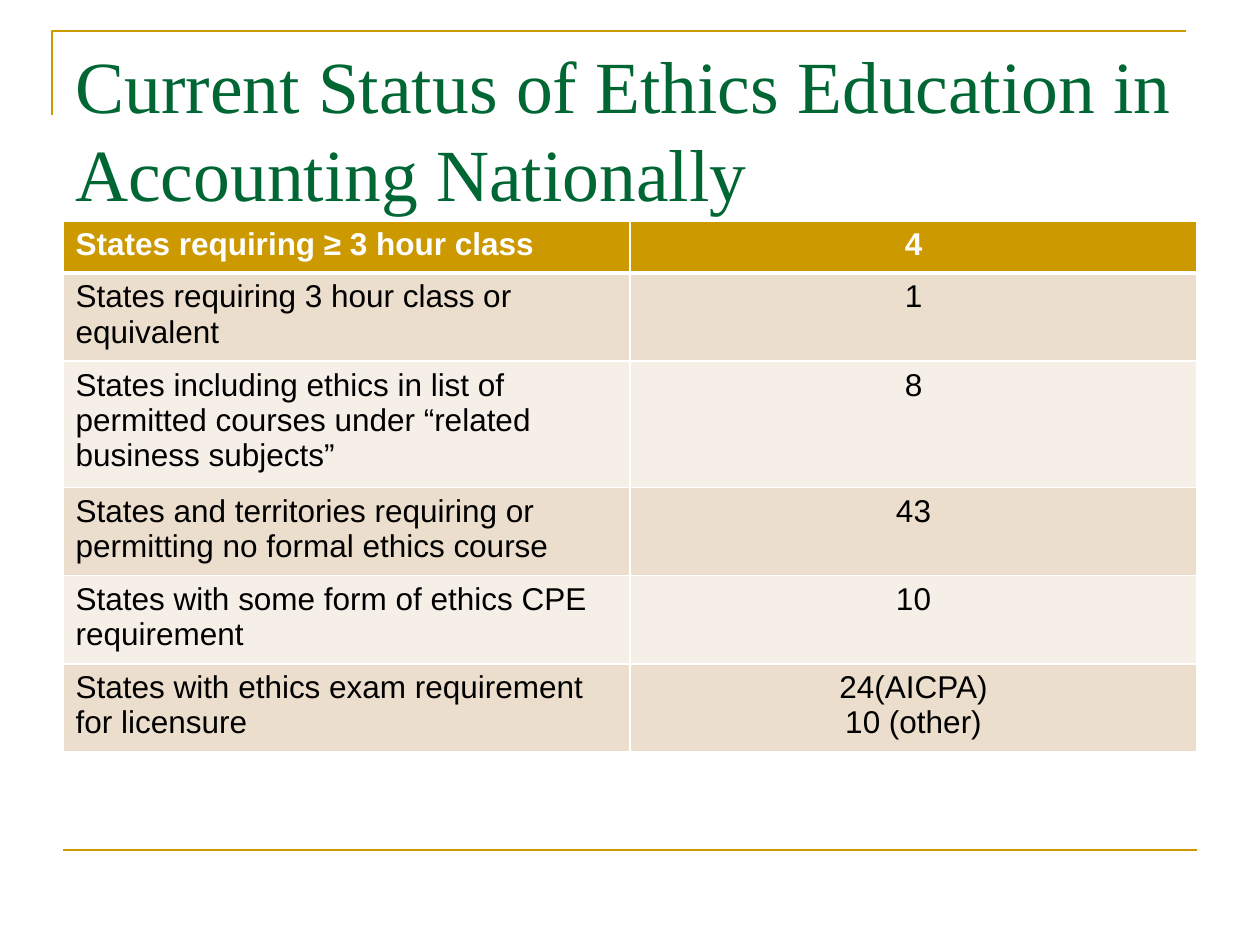
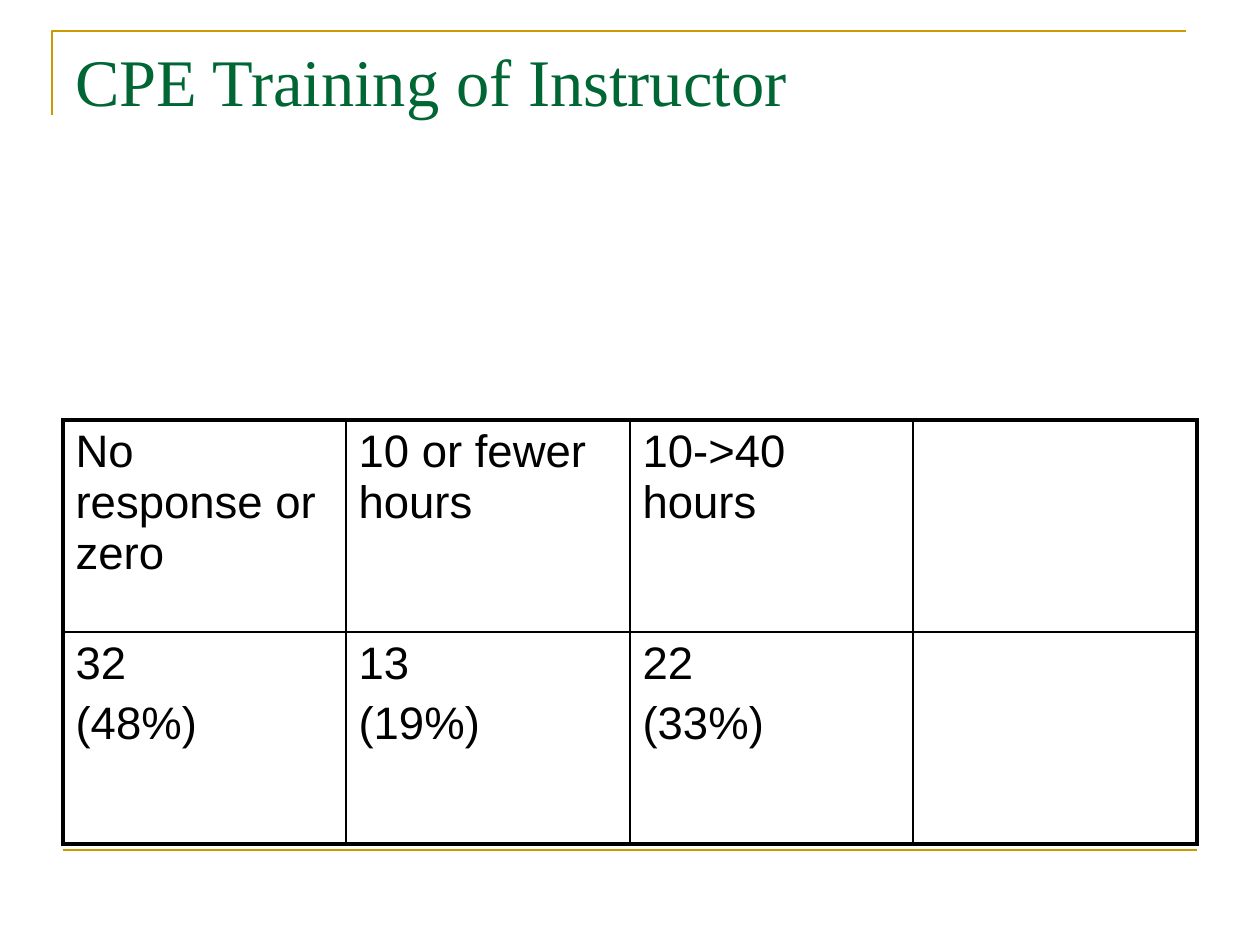
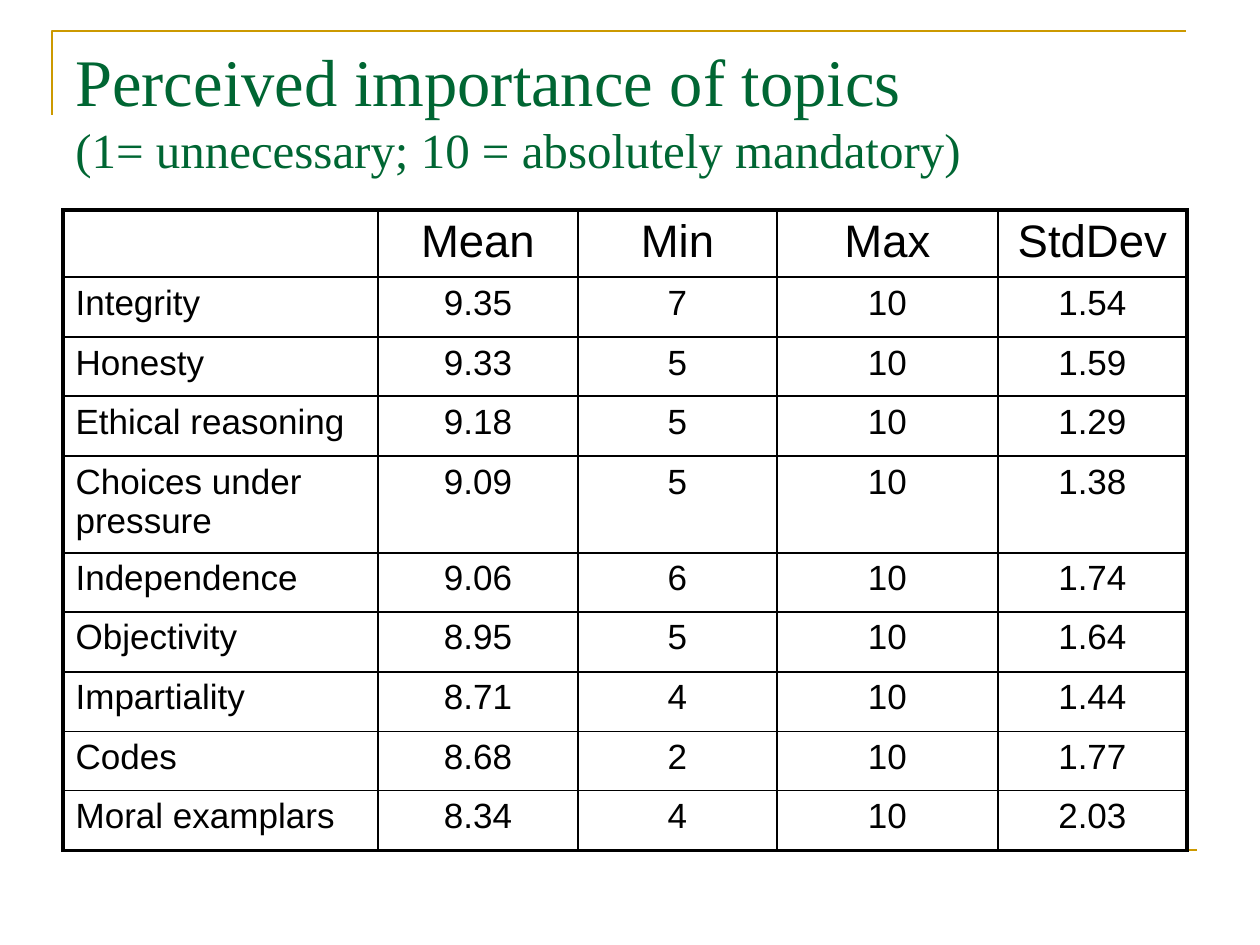
"""Build three slides on ethics education in accounting."""
import pptx
import pptx.dml.color
import pptx.enum.shapes
import pptx.enum.text
import pptx.oxml.ns
import pptx.util
from lxml import etree

RGBColor = pptx.dml.color.RGBColor
ALIGN = pptx.enum.text.PP_ALIGN

GOLD = RGBColor(0xCC, 0x99, 0x00)
GREEN = RGBColor(0x00, 0x66, 0x33)
BLACK = RGBColor(0x00, 0x00, 0x00)
WHITE = RGBColor(0xFF, 0xFF, 0xFF)
TAN = RGBColor(0xEC, 0xDE, 0xCC)
CREAM = RGBColor(0xF6, 0xEF, 0xE7)

TITLE_FONT, BODY_FONT = "Times New Roman", "Arial"
EMU_PER_PX = 914400 / 126
SLIDE_WIDTH, SLIDE_HEIGHT = 1260, 945
LEFT, CONTENT_WIDTH = 63, 1134
TITLE_TOP, TITLE_HEIGHT, TITLE_INSET = 38, 157, 2
CORNER = [(52, 115), (52, 31), (1186, 31)]
FOOTER_Y = 850

SLIDES = [
    {
        "title": [("Current Status of Ethics Education in Accounting Nationally", 42)],
        "top": 221,
        "columns": [567, 567],
        "heights": [52] * 6,
        "sizes": (18, 18),
        "centred_from": 1,
        "banded": True,
        "rows": [
            ("States requiring ≥ 3 hour class", "4"),
            ("States requiring 3 hour class or equivalent", "1"),
            ("States including ethics in list of permitted courses under "
             "“related business subjects”", "8"),
            ("States and territories requiring or permitting no formal ethics course", "43"),
            ("States with some form of ethics CPE requirement", "10"),
            ("States with ethics exam requirement for licensure", "24(AICPA)\n10 (other)"),
        ],
    },
    {
        "title": [("CPE Training of Instructor", 38)],
        "top": 420,
        "columns": [283, 284, 283, 284],
        "heights": [212, 212],
        "sizes": (26, 26),
        "centred_from": 4,
        "banded": False,
        "rows": [
            ("No response or zero", "10 or fewer hours", "10->40 hours", ""),
            ("32\n(48%)", "13\n(19%)", "22\n(33%)", ""),
        ],
    },
    {
        "title": [("Perceived importance of topics", 38),
                  ("(1= unnecessary; 10 = absolutely mandatory)", 28)],
        "top": 210,
        "columns": [315, 200, 199, 221, 189],
        "heights": [62, 60, 59, 60, 89, 59, 60, 60, 59, 60],
        "sizes": (26, 20),
        "centred_from": 1,
        "banded": False,
        "rows": [
            ("", "Mean", "Min", "Max", "StdDev"),
            ("Integrity", "9.35", "7", "10", "1.54"),
            ("Honesty", "9.33", "5", "10", "1.59"),
            ("Ethical reasoning", "9.18", "5", "10", "1.29"),
            ("Choices under pressure", "9.09", "5", "10", "1.38"),
            ("Independence", "9.06", "6", "10", "1.74"),
            ("Objectivity", "8.95", "5", "10", "1.64"),
            ("Impartiality", "8.71", "4", "10", "1.44"),
            ("Codes", "8.68", "2", "10", "1.77"),
            ("Moral examplars", "8.34", "4", "10", "2.03"),
        ],
    },
]


def px(length):
    return pptx.util.Emu(round(length * EMU_PER_PX))


def write(paragraph, text, *, size, font=BODY_FONT, color=BLACK, bold=False,
          align=ALIGN.LEFT, before=0):
    paragraph.alignment = align
    if before:
        paragraph.space_before = pptx.util.Pt(before)
    run = paragraph.add_run()
    run.text = text
    run.font.size = pptx.util.Pt(size)
    run.font.name = font
    run.font.bold = bold
    run.font.color.rgb = color


def style_line(line):
    line.color.rgb = GOLD
    line.width = pptx.util.Pt(1.5)


def add_rules(slide):
    builder = slide.shapes.build_freeform(*CORNER[0], scale=EMU_PER_PX)
    builder.add_line_segments(CORNER[1:], close=False)
    corner = builder.convert_to_shape()
    corner.shadow.inherit = False
    corner.fill.background()
    style_line(corner.line)
    footer = slide.shapes.add_connector(
        pptx.enum.shapes.MSO_CONNECTOR.STRAIGHT,
        px(LEFT), px(FOOTER_Y), px(LEFT + CONTENT_WIDTH), px(FOOTER_Y))
    style_line(footer.line)
    etree.SubElement(footer._element.spPr, pptx.oxml.ns.qn("a:effectLst"))


def add_title(slide, lines):
    frame = slide.shapes.add_textbox(
        px(LEFT), px(TITLE_TOP), px(CONTENT_WIDTH), px(TITLE_HEIGHT)).text_frame
    frame.word_wrap = True
    frame.margin_top = px(TITLE_INSET)
    paragraph = frame.paragraphs[0]
    for index, (text, size) in enumerate(lines):
        if index:
            paragraph.add_line_break()
        write(paragraph, text, size=size, font=TITLE_FONT, color=GREEN)


def set_borders(cell, color, widths):
    properties = cell._tc.get_or_add_tcPr()
    for side, width in zip("LRTB", widths):
        border = etree.SubElement(properties, pptx.oxml.ns.qn(f"a:ln{side}"),
                                  w=str(pptx.util.Pt(width)))
        fill = etree.SubElement(border, pptx.oxml.ns.qn("a:solidFill"))
        etree.SubElement(fill, pptx.oxml.ns.qn("a:srgbClr"), val=str(color))


def edge_widths(count, banded, horizontal):
    if not banded:
        return [2.25] + [1] * (count - 1) + [2.25]
    return [1, 3 if horizontal else 1] + [1] * (count - 1)


def add_grid(slide, content):
    rows, columns, heights = content["rows"], content["columns"], content["heights"]
    banded = content["banded"]
    table = slide.shapes.add_table(
        len(rows), len(columns), px(LEFT), px(content["top"]),
        px(sum(columns)), px(sum(heights))).table
    table.first_row = table.horz_banding = False
    for column, width in zip(table.columns, columns):
        column.width = px(width)
    for row, height in zip(table.rows, heights):
        row.height = px(height)
    across = edge_widths(len(rows), banded, True)
    down = edge_widths(len(columns), banded, False)
    for r, values in enumerate(rows):
        heading = banded and r == 0
        size = content["sizes"][min(r, 1)]
        for c, text in enumerate(values):
            cell = table.cell(r, c)
            set_borders(cell, WHITE if banded else BLACK,
                        (down[c], down[c + 1], across[r], across[r + 1]))
            if banded:
                cell.fill.solid()
                cell.fill.fore_color.rgb = GOLD if heading else (CREAM, TAN)[r % 2]
            else:
                cell.fill.background()
            for index, line in enumerate(text.split("\n") if text else []):
                frame = cell.text_frame
                write(frame.add_paragraph() if index else frame.paragraphs[0], line,
                      size=size, color=WHITE if heading else BLACK, bold=heading,
                      align=ALIGN.CENTER if c >= content["centred_from"] else ALIGN.LEFT,
                      before=0 if banded or not index else size / 5)


def main():
    deck = pptx.Presentation()
    deck.slide_width, deck.slide_height = px(SLIDE_WIDTH), px(SLIDE_HEIGHT)
    for content in SLIDES:
        slide = deck.slides.add_slide(deck.slide_layouts[6])
        add_rules(slide)
        add_title(slide, content["title"])
        add_grid(slide, content)
    deck.save("out.pptx")


if __name__ == "__main__":
    main()
